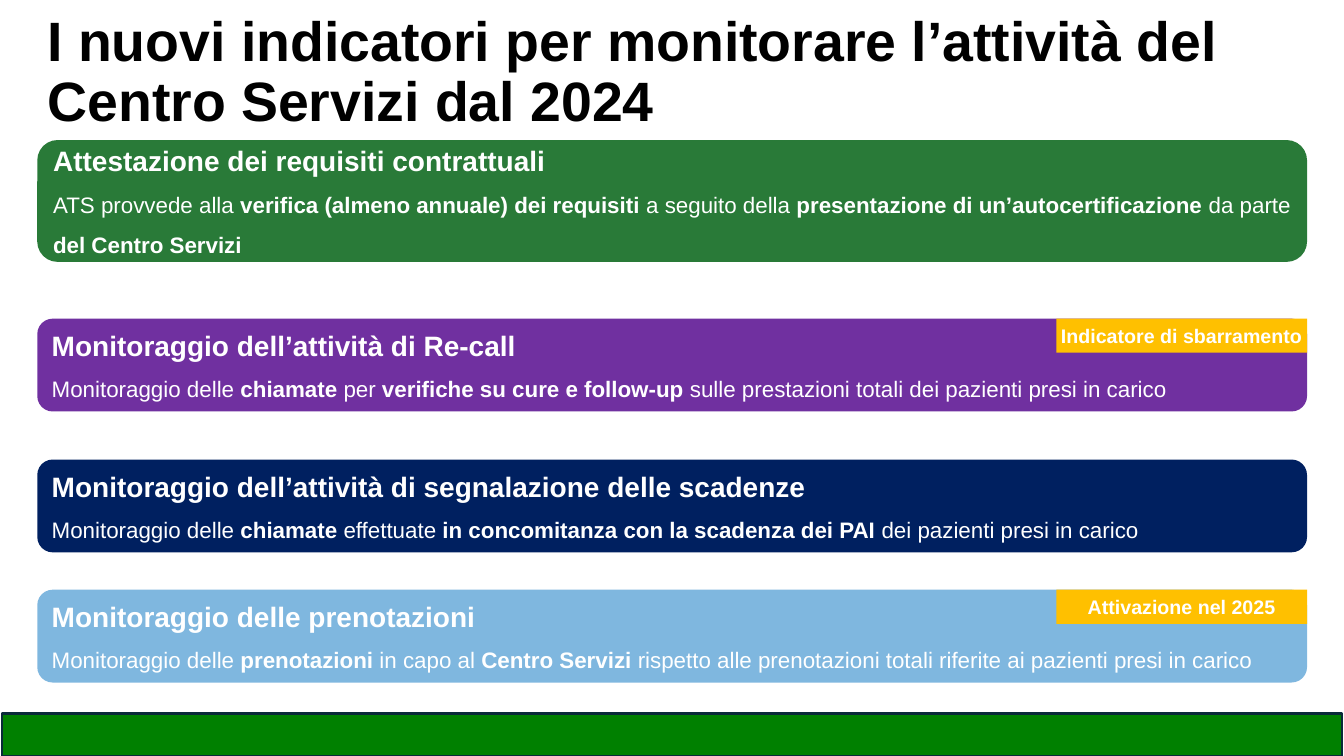
from lxml import etree
from pptx import Presentation
from pptx.dml.color import RGBColor
from pptx.enum.shapes import MSO_SHAPE as Shape
from pptx.enum.text import MSO_ANCHOR as Anchor, MSO_AUTO_SIZE as AutoSize, PP_ALIGN as Align
from pptx.oxml.ns import qn
from pptx.util import Cm, Pt

FONT = "Arial"
COLORS = {
    "black": "000000", "white": "FFFFFF", "green": "297A38", "purple": "7030A0",
    "navy": "002060", "blue": "0070C0", "amber": "FFC000",
    "footer": "008000", "footer_line": "092A39",
}
LEFT, WIDTH = 0.94, 32
CARD_HEIGHT = 2.34
TAG_WIDTH, TAG_HEIGHT = 6.32, 0.86

# Each body alternates regular and bold text, starting with regular.
CARDS = [
    {"top": 3.53, "height": 3.07, "color": "green",
     "heading": "Attestazione dei requisiti contrattuali",
     "body": ["ATS provvede alla ", "verifica (almeno annuale) dei requisiti ",
              "a seguito della ", "presentazione di un’autocertificazione ",
              "da parte ", "del Centro Servizi"]},
    {"top": 8.03, "color": "purple", "tag": "Indicatore di sbarramento",
     "heading": "Monitoraggio dell’attività di Re-call",
     "body": ["Monitoraggio delle ", "chiamate ", "per",
              " verifiche su cure e follow-up ",
              "sulle prestazioni totali dei pazienti presi in carico"]},
    {"top": 11.58, "color": "navy",
     "heading": "Monitoraggio dell’attività di segnalazione delle scadenze",
     "body": ["Monitoraggio delle ", "chiamate ", "effettuate ",
              "in concomitanza con la scadenza dei PAI ",
              "dei pazienti presi in carico"]},
    {"top": 14.86, "color": "blue", "alpha": 50, "tag": "Attivazione nel 2025",
     "heading": "Monitoraggio delle prenotazioni",
     "body": ["Monitoraggio delle ", "prenotazioni ", "in capo al ", "Centro Servizi ",
              "rispetto alle prenotazioni totali riferite ai pazienti presi in carico"]},
]


def rgb(name):
    return RGBColor.from_string(COLORS[name])


def add_run(paragraph, text, size, bold=True, color="white"):
    run = paragraph.add_run()
    run.text = text
    run.font.name = FONT
    run.font.size = Pt(size)
    run.font.bold = bold
    run.font.color.rgb = rgb(color)


def add_box(slide, kind, left, top, width, height, color, inset=0):
    """Add a flat, borderless shape with its text centred vertically."""
    shape = slide.shapes.add_shape(kind, Cm(left), Cm(top), Cm(width), Cm(height))
    shape.shadow.inherit = False
    shape.fill.solid()
    shape.fill.fore_color.rgb = rgb(color)
    shape.line.fill.background()
    frame = shape.text_frame
    frame.word_wrap = True
    frame.vertical_anchor = Anchor.MIDDLE
    frame.margin_left = frame.margin_right = Cm(inset)
    frame.margin_top = frame.margin_bottom = 0
    return shape


def set_opacity(shape, percent):
    color = shape.fill._xPr.find(qn("a:solidFill"))[0]
    etree.SubElement(color, qn("a:alpha")).set("val", str(percent * 1000))


def add_title(slide, left, top, width, height):
    title = slide.shapes.title
    title.left, title.top, title.width, title.height = map(Cm, (left, top, width, height))
    frame = title.text_frame
    frame.word_wrap = True
    frame.auto_size = AutoSize.NONE
    frame.vertical_anchor = Anchor.MIDDLE
    paragraph = frame.paragraphs[0]
    paragraph.alignment = Align.LEFT
    paragraph.line_spacing = 0.9
    add_run(paragraph, "I nuovi indicatori per monitorare l’attività del Centro Servizi dal 2024",
            39.6, color="black")


def add_tag(slide, right, top, text):
    tag = add_box(slide, Shape.RECTANGLE, right - TAG_WIDTH, top, TAG_WIDTH, TAG_HEIGHT, "amber")
    paragraph = tag.text_frame.paragraphs[0]
    paragraph.alignment = Align.CENTER
    add_run(paragraph, text, 14)


def add_card(slide, card, left, width):
    top = card["top"]
    shape = add_box(slide, Shape.ROUNDED_RECTANGLE, left, top, width,
                    card.get("height", CARD_HEIGHT), card["color"], inset=0.25)
    if "alpha" in card:
        set_opacity(shape, card["alpha"])
    heading = shape.text_frame.paragraphs[0]
    add_run(heading, card["heading"], 20)
    body = shape.text_frame.add_paragraph()
    body.line_spacing = 1.5
    for index, text in enumerate(card["body"]):
        add_run(body, text, 16, bold=index % 2 == 1)
    for paragraph in (heading, body):
        paragraph.alignment = Align.LEFT
    if "tag" in card:
        add_tag(slide, left + width, top, card["tag"])


def add_footer(slide, left, top, width, height):
    bar = add_box(slide, Shape.RECTANGLE, left, top, width, height, "footer")
    bar.line.color.rgb = rgb("footer_line")
    bar.line.width = Pt(1.5)


def main():
    presentation = Presentation()
    presentation.slide_width, presentation.slide_height = Cm(33.87), Cm(19.05)
    slide = presentation.slides.add_slide(presentation.slide_layouts[5])
    add_title(slide, LEFT, 0.97, WIDTH, 1.78)
    for card in CARDS:
        add_card(slide, card, LEFT, WIDTH)
    add_footer(slide, 0.05, 17.98, 33.78, 1.07)
    presentation.save("out.pptx")


if __name__ == "__main__":
    main()
